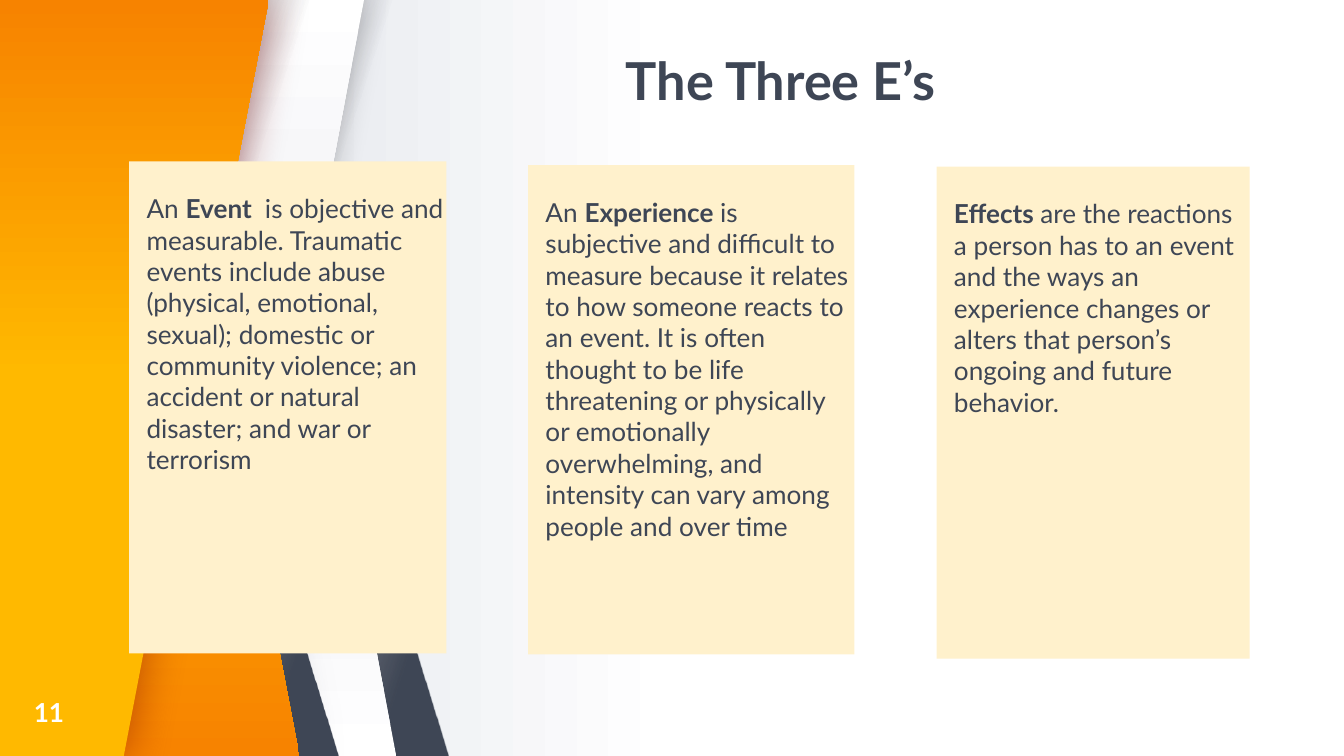
from lxml.etree import SubElement
from pptx import Presentation
from pptx.dml.color import RGBColor
from pptx.enum.shapes import MSO_SHAPE as SHAPE
from pptx.enum.text import MSO_ANCHOR as ANCHOR, PP_ALIGN as ALIGN
from pptx.oxml.ns import qn
from pptx.util import Cm, Pt

WHITE = RGBColor(0xFF, 0xFF, 0xFF)
MIST = RGBColor(0xEA, 0xEC, 0xF0)
SLATE = RGBColor(0x3E, 0x46, 0x55)
DARK = RGBColor(0x27, 0x25, 0x2C)
YELLOW = RGBColor(0xFF, 0xB9, 0x00)
ORANGE = RGBColor(0xF7, 0x83, 0x00)
MAROON = RGBColor(0x7E, 0x08, 0x08)
BLACK = RGBColor(0, 0, 0)
CREAM = RGBColor(0xFF, 0xF1, 0xCC)
FONT = "Lato"

SLIDE_W, SLIDE_H = 25.4, 14.29
BAND_W = 5.84
WIDE_SLANT, SLANT = 0.753, 0.463
SHADE = [(0, SLATE, 100), (13, SLATE, 100), (55, DARK, 0), (100, DARK, 0)]
PAPER = [(0, WHITE, 100), (47, MIST, 100), (100, MIST, 100)]

CARDS = [
    ((2.44, 3.05, 6, 9.3), [
        ("An ", False), ("Event ", True),
        (" is objective and measurable. Traumatic events include abuse "
         "(physical, emotional, sexual); domestic or community violence; an "
         "accident or natural disaster; and war or terrorism", False)]),
    ((9.98, 3.12, 6.17, 9.25), [
        ("An ", False), ("Experience ", True),
        ("is subjective and difficult to measure because it relates to how "
         "someone reacts to an event. It is often thought to be life "
         "threatening or physically or emotionally overwhelming, and "
         "intensity can vary among people and over time", False)]),
    ((17.7, 3.15, 5.92, 9.3), [
        ("Effects ", True),
        ("are the reactions a person has to an event and the ways an "
         "experience changes or alters that person’s ongoing and future "
         "behavior.", False)]),
]


def add_color(parent, color, alpha):
    clr = SubElement(parent, qn("a:srgbClr"), val=str(color))
    if alpha < 100:
        SubElement(clr, qn("a:alpha"), val=str(alpha * 1000))


def set_gradient(fill, props, stops, angle):
    """Fill props with (position %, colour, opacity %) stops; angle is clockwise."""
    fill.solid()
    solid = props.find(qn("a:solidFill"))
    grad = SubElement(props, qn("a:gradFill"), rotWithShape="1")
    props.replace(solid, grad)
    stop_list = SubElement(grad, qn("a:gsLst"))
    for pos, color, alpha in stops:
        stop = SubElement(stop_list, qn("a:gs"), pos=str(pos * 1000))
        add_color(stop, color, alpha)
    SubElement(grad, qn("a:lin"), ang=str(angle * 60000), scaled="0")


def finish(sp, stops, angle, shadow=None):
    """Apply a gradient, no outline and an optional (colour, opacity, blur) glow."""
    set_gradient(sp.fill, sp._element.spPr, stops, angle)
    sp.line.fill.background()
    sp.shadow.inherit = False
    if shadow:
        color, alpha, blur = shadow
        effects = sp._element.spPr.find(qn("a:effectLst"))
        outer = SubElement(effects, qn("a:outerShdw"), blurRad=str(Pt(blur)),
                           dist="0", dir="0", algn="ctr", rotWithShape="0")
        add_color(outer, color, alpha)


def add_band(s, left, slant, stops, angle, flip=False, shadow=None):
    sp = s.shapes.add_shape(SHAPE.PARALLELOGRAM, Cm(left), 0, Cm(BAND_W), Cm(SLIDE_H))
    sp.adjustments[0] = slant
    if flip:
        sp._element.spPr.find(qn("a:xfrm")).set("flipH", "1")
    finish(sp, stops, angle, shadow)


def add_shade(s, left, flip):
    add_band(s, left, WIDE_SLANT, SHADE, 342 if flip else 18, flip)


def add_edge_panel(s, top_w, bottom_w, middle, angle, shadow):
    """Panel from the slide's left edge to a slanted side."""
    fb = s.shapes.build_freeform(0, 0, scale=1.0)
    fb.add_line_segments([(Cm(top_w), 0), (Cm(bottom_w), Cm(SLIDE_H)), (0, Cm(SLIDE_H))])
    stops = [(0, YELLOW, 100), (middle, YELLOW, 100), (100, ORANGE, 100)]
    finish(fb.convert_to_shape(), stops, angle, shadow)


def add_ribbons(s):
    add_shade(s, 2.64, True)
    add_band(s, 1.65, SLANT, PAPER, 270, flip=True)
    add_shade(s, 1.65, False)
    add_band(s, 1.04, SLANT, PAPER, 90, shadow=(BLACK, 20, 16.9))
    add_shade(s, 0.56, True)
    add_edge_panel(s, 2.92, 5.66, 37, 90, (SLATE, 50, 24.8))
    add_shade(s, 0.08, False)
    add_edge_panel(s, 5.08, 2.34, 50, 270, (MAROON, 50, 24.8))


def write(sp, runs, size=14, color=SLATE, align=ALIGN.LEFT, anchor=ANCHOR.TOP,
          spacing=1.0, left=0, top=0):
    """Write (text, bold) runs; left and top are insets in centimetres."""
    tf = sp.text_frame
    tf.word_wrap = True
    tf.vertical_anchor = anchor
    tf.margin_left, tf.margin_top = Cm(left), Cm(top)
    tf.margin_right = tf.margin_bottom = 0
    p = tf.paragraphs[0]
    p.alignment, p.line_spacing = align, spacing
    for text, bold in runs:
        r = p.add_run()
        r.text = text
        r.font.name, r.font.size, r.font.bold = FONT, Pt(size), bold
        r.font.color.rgb = color


def add_label(s, box, text, **fmt):
    write(s.shapes.add_textbox(*map(Cm, box)), [(text, True)], **fmt)


def add_card(s, box, runs):
    sp = s.shapes.add_shape(SHAPE.RECTANGLE, *map(Cm, box))
    sp.fill.solid()
    sp.fill.fore_color.rgb = CREAM
    sp.line.fill.background()
    sp.shadow.inherit = False
    write(sp, runs, left=0.33, top=0.59)


def main():
    prs = Presentation()
    prs.slide_width, prs.slide_height = Cm(SLIDE_W), Cm(SLIDE_H)
    s = prs.slides.add_slide(prs.slide_layouts[6])
    fill = s.background.fill
    fill.solid()
    set_gradient(fill, s._element.cSld.find(qn("p:bg")).find(qn("p:bgPr")),
                 [(0, WHITE, 100), (50, WHITE, 100), (76, MIST, 100), (100, MIST, 100)], 180)
    add_ribbons(s)
    add_label(s, (7.16, 1.02, 15.19, 1.09), "The Three E’s", size=28,
              align=ALIGN.CENTER, anchor=ANCHOR.BOTTOM, spacing=0.9)
    for box, runs in CARDS:
        add_card(s, box, runs)
    add_label(s, (0.64, 13.11, 1.02, 0.69), "11", color=WHITE, anchor=ANCHOR.MIDDLE)
    prs.save("out.pptx")


if __name__ == "__main__":
    main()
